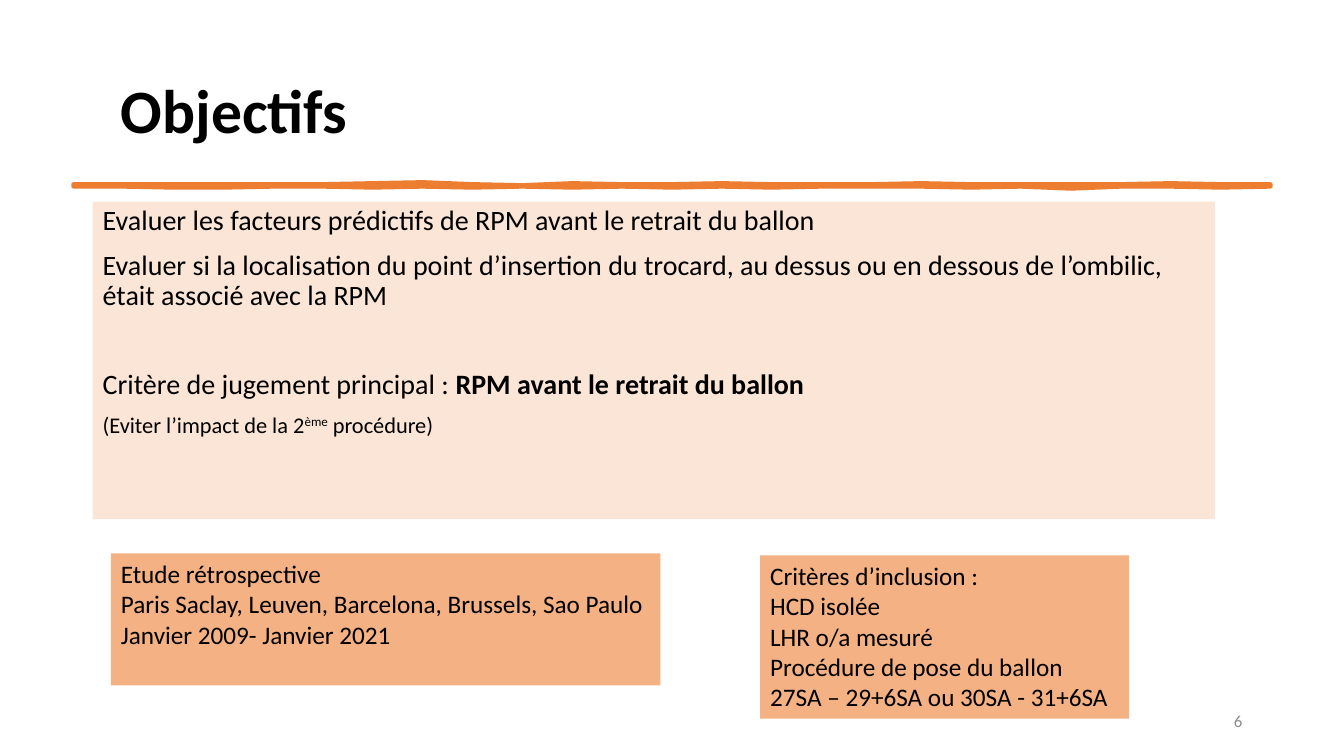
from pptx import Presentation
from pptx.dml.color import RGBColor
from pptx.enum import shapes, text
from pptx.util import Inches, Pt

BLACK = RGBColor(0x00, 0x00, 0x00)
GREY = RGBColor(0x8C, 0x8C, 0x8C)
ORANGE = RGBColor(0xED, 0x7D, 0x31)
PEACH = RGBColor(0xF4, 0xB1, 0x83)
PALE_PEACH = RGBColor(0xFB, 0xE5, 0xD6)
FONT = "Calibri"

TITLE = ["Objectifs"]
PAGE_NUMBER = ["6"]
SMALL = {"size": 16}
AIMS = [
    "Evaluer les facteurs prédictifs de RPM avant le retrait du ballon",
    "Evaluer si la localisation du point d’insertion du trocard, au dessus ou en dessous de l’ombilic, "
    "était associé avec la RPM",
    [("Critère de jugement principal : ", {}), ("RPM avant le retrait du ballon", {"bold": True})],
    [("(Eviter l’impact de la 2", SMALL), ("ème", {**SMALL, "raised": True}), (" procédure)", SMALL)],
]
STUDY = [
    "Etude rétrospective",
    "Paris Saclay, Leuven, Barcelona, Brussels, Sao Paulo",
    "Janvier 2009- Janvier 2021",
]
INCLUSION = [
    "Critères d’inclusion :",
    "HCD isolée",
    "LHR o/a mesuré",
    "Procédure de pose du ballon 27SA – 29+6SA ou 30SA - 31+6SA",
]

AIM_GAP = 10
CRITERION_GAP = 42
AIM_GAPS = [AIM_GAP, AIM_GAP, CRITERION_GAP, AIM_GAP]

MIDDLE = {"anchor": text.MSO_ANCHOR.MIDDLE}
TEXT_BLOCKS = [
    ((9.42, 6.95, 3, 0.4), PAGE_NUMBER,
     {"size": 12, "color": GREY, "align": text.PP_ALIGN.RIGHT, **MIDDLE}),
    ((1.1, 0.4, 11.5, 1.45), TITLE, {"size": 44, "bold": True, "spacing": 0.9, **MIDDLE}),
    ((0.92, 2, 11.13, 3.15), AIMS,
     {"size": 20, "fill": PALE_PEACH, "spacing": 0.9, "gaps": AIM_GAPS}),
    ((1.1, 5.49, 5.45, 1.31), STUDY, {"size": 18, "fill": PEACH, "wrap": False}),
    ((7.54, 5.51, 3.66, 1.62), INCLUSION, {"size": 18, "fill": PEACH}),
]

BRUSH_LEFT, BRUSH_WIDTH = 0.73, 11.87
BRUSH_TOP, BRUSH_BOTTOM = 1.83, 1.85
SWELL_UNIT = 0.01
SWELLS_UP = [0, 0, 0, 0, 0, 0, 1, 2, 0, -1, 1, 0, 0, 1, 0, 0, 0, 1, 0, 0, 0, 0, 1, 0, 0]
SWELLS_DOWN = [0, 0, 1, 1, 0, 0, 1, 0, 1, 0, 1, 0, 1, 0, 1, 0, 0, 0, 1, 0, 2, 0, 0, 1, 0]


def add_text(slide, box, paragraphs, size, fill=None, color=BLACK, bold=False, wrap=True,
             align=text.PP_ALIGN.LEFT, anchor=text.MSO_ANCHOR.TOP, spacing=1.0, gaps=None):
    place = [Inches(length) for length in box]
    if fill is None:
        shape = slide.shapes.add_textbox(*place)
    else:
        shape = slide.shapes.add_shape(shapes.MSO_SHAPE.RECTANGLE, *place)
        shape.shadow.inherit = False
        shape.fill.solid()
        shape.fill.fore_color.rgb = fill
        shape.line.fill.background()
    frame = shape.text_frame
    frame.word_wrap = wrap
    frame.vertical_anchor = anchor
    for index, content in enumerate(paragraphs):
        paragraph = frame.paragraphs[0] if index == 0 else frame.add_paragraph()
        paragraph.alignment = align
        paragraph.line_spacing = spacing
        paragraph.space_before = Pt(gaps[index] if gaps else 0)
        pieces = [(content, {})] if isinstance(content, str) else content
        for words, style in pieces:
            run = paragraph.add_run()
            run.text = words
            run.font.name = FONT
            run.font.size = Pt(style.get("size", size))
            run.font.bold = style.get("bold", bold)
            run.font.color.rgb = color
            if style.get("raised"):
                run.font._element.set("baseline", "30000")


def brush_edge(base, swells, direction):
    step = BRUSH_WIDTH / (len(swells) - 1)
    return [
        (Inches(BRUSH_LEFT + index * step), Inches(base + direction * swell * SWELL_UNIT))
        for index, swell in enumerate(swells)
    ]


def add_brush_line(slide):
    upper_edge = brush_edge(BRUSH_TOP, SWELLS_UP, -1)
    lower_edge = brush_edge(BRUSH_BOTTOM, SWELLS_DOWN, 1)
    start, *rest = upper_edge + lower_edge[::-1]
    builder = slide.shapes.build_freeform(*start)
    builder.add_line_segments(rest, close=True)
    brush_line = builder.convert_to_shape()
    brush_line.shadow.inherit = False
    brush_line.fill.solid()
    brush_line.fill.fore_color.rgb = ORANGE
    brush_line.line.color.rgb = ORANGE
    brush_line.line.width = Pt(3.25)


def main():
    presentation = Presentation()
    presentation.slide_width = Inches(13.33)
    presentation.slide_height = Inches(7.5)
    slide = presentation.slides.add_slide(presentation.slide_layouts[6])
    add_brush_line(slide)
    for box, paragraphs, text_format in TEXT_BLOCKS:
        add_text(slide, box, paragraphs, **text_format)
    presentation.save("out.pptx")


if __name__ == "__main__":
    main()
